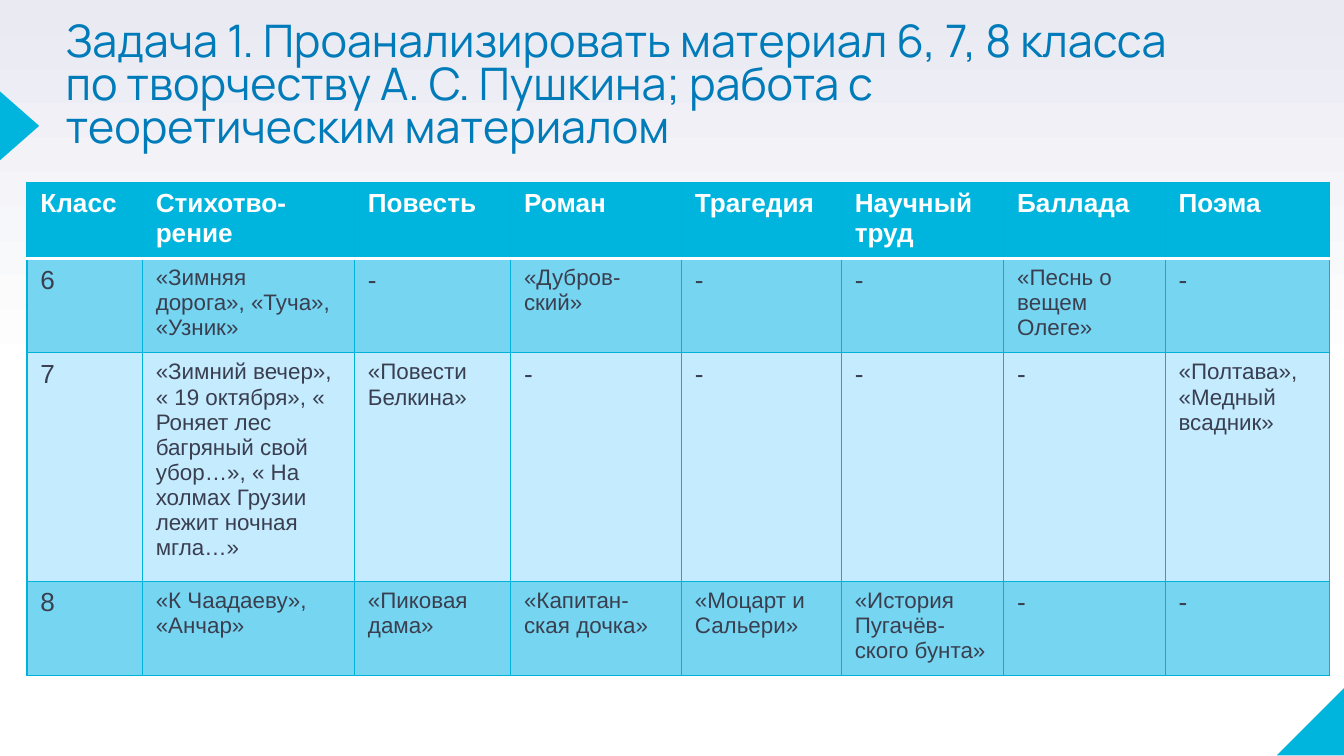
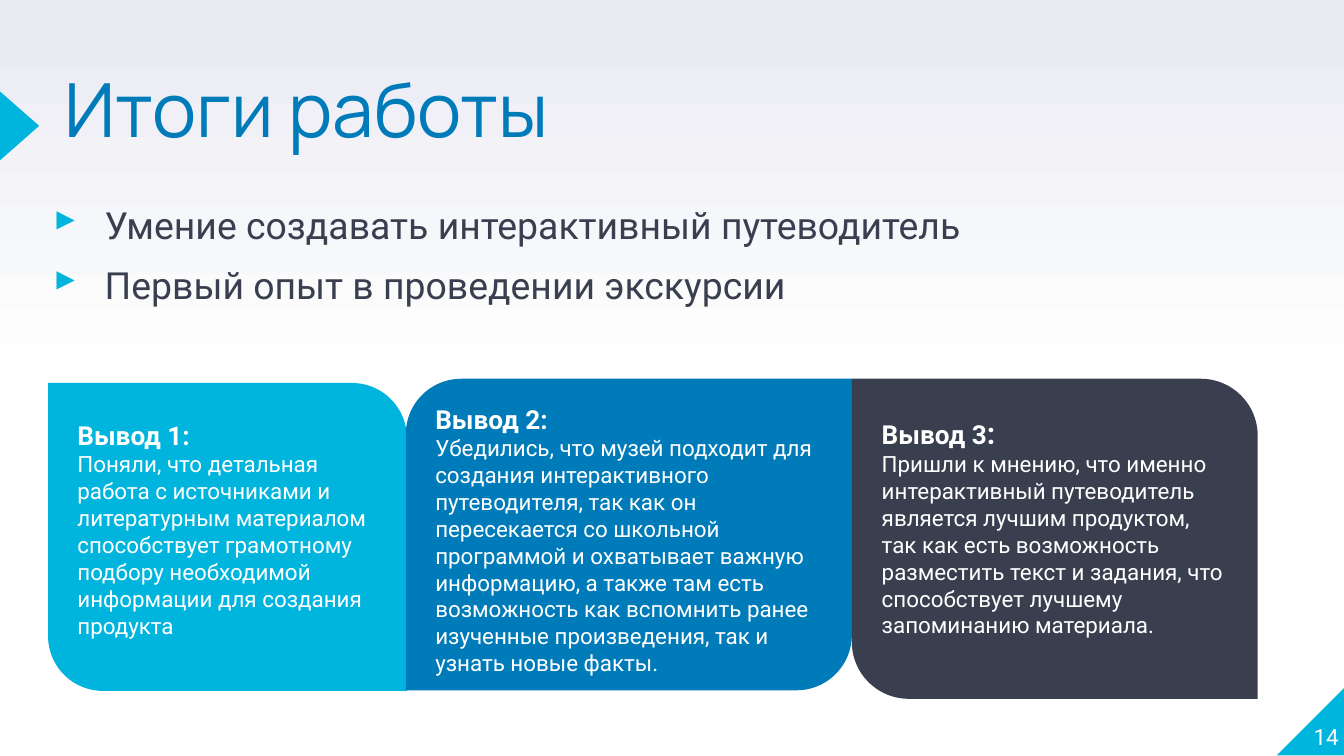
"""Build two slides: a table of works by school class and the results of the project."""
from lxml import etree
from pptx import Presentation
from pptx import util as u
from pptx.dml.color import RGBColor
from pptx.enum import shapes, text
from pptx.oxml import ns

COLORS = {
    "cyan": "00B5DD", "blue": "007BB9", "dark": "3A3F50", "white": "FFFFFF",
    "haze": "E9EAF2", "grid": "00B1D8", "band": "76D5F1", "pale": "C5EBFF",
}
STYLES = {
    "title": {"name": "Manrope", "color": "blue"},
    "header": {"name": "Arial", "size": 14, "color": "white", "bold": True},
    "mark": {"name": "Arial", "size": 14, "color": "dark", "bold": False},
    "works": {"name": "Arial", "size": 12, "color": "dark", "bold": False},
    "bullet": {"name": "Roboto", "size": 20, "color": "dark"},
    "heading": {"name": "Roboto", "size": 14, "color": "white", "bold": True},
    "detail": {"name": "Roboto", "size": 12, "color": "white", "bold": False},
}

TASK_TITLE = ("Задача 1. Проанализировать материал 6, 7, 8 класса по творчеству "
              "А. С. Пушкина; работа с теоретическим материалом")
TABLE_ROWS = [
    ["Класс", "Стихотво-рение", "Повесть", "Роман", "Трагедия", "Научный труд", "Баллада", "Поэма"],
    ["6", "«Зимняя дорога», «Туча», «Узник»", "-", "«Дубров-ский»", "-", "-",
     "«Песнь о вещем Олеге»", "-"],
    ["7", "«Зимний вечер», « 19 октября», « Роняет лес багряный свой убор…», "
          "« На холмах Грузии лежит ночная мгла…»",
     "«Повести Белкина»", "-", "-", "-", "-", "«Полтава»,\n«Медный всадник»"],
    ["8", "«К Чаадаеву», «Анчар»", "«Пиковая дама»", "«Капитан-ская дочка»",
     "«Моцарт и Сальери»", "«История Пугачёв-ского бунта»", "-", "-"],
]
COLUMN_WIDTHS = [2.18, 4.01, 2.95, 3.23, 3.02, 3.07, 3.05, 3.1]
ROW_HEIGHTS = [1.38, 1.68, 4.03, 1.68]
ROW_FILLS = ["cyan", "band", "pale", "band"]

RESULTS_TITLE = "Итоги работы"
RESULTS = ["Умение создавать интерактивный путеводитель", "Первый опыт в проведении экскурсии"]
CONCLUSIONS = [
    {"heading": [("Вывод 1:", {})],
     "detail": "Поняли, что детальная работа с источниками и литературным материалом "
               "способствует грамотному подбору необходимой информации для создания продукта",
     "place": (0.91, 7.24, 6.78, 5.82), "corners": (0, 0.178), "fill": "cyan", "top": 0.38},
    {"heading": [("Вывод 2:", {})],
     "detail": "Убедились, что музей подходит для создания интерактивного путеводителя, "
               "так как он пересекается со школьной программой и охватывает важную информацию, "
               "а также там есть возможность как вспомнить ранее изученные произведения, "
               "так и узнать новые факты.",
     "place": (7.67, 7.16, 8.43, 5.89), "corners": (0.178, 0), "fill": "blue", "top": 0.15},
    {"heading": [("Вывод 3", {}), (":", {"size": 16})],
     "detail": "Пришли к мнению, что именно интерактивный путеводитель является лучшим "
               "продуктом, так как есть возможность разместить текст и задания, что "
               "способствует лучшему запоминанию материала.",
     "place": (16.1, 7.16, 7.67, 6.05), "corners": (0, 0.178), "fill": "dark", "top": 0.36},
]


def rgb(name):
    return RGBColor.from_string(COLORS[name])


def lengths(values):
    return [u.Cm(value) for value in values]


def add_span(para, words, style, **changes):
    span = para.add_run()
    span.text = words
    for key, value in {**STYLES[style], **changes}.items():
        if key == "color":
            span.font.color.rgb = rgb(value)
        else:
            setattr(span.font, key, u.Pt(value) if key == "size" else value)


def set_paras(frame, count):
    for _ in range(count - 1):
        frame.add_paragraph()
    return frame.paragraphs


def set_frame(frame, margins=(0, 0, 0, 0), anchor=text.MSO_ANCHOR.TOP):
    frame.word_wrap = True
    frame.vertical_anchor = anchor
    for side, value in zip(("left", "top", "right", "bottom"), margins):
        setattr(frame, "margin_" + side, u.Cm(value))
    return frame


def add_box(page, place, **options):
    return set_frame(page.shapes.add_textbox(*lengths(place)).text_frame, **options)


def add_figure(page, kind, place, fill, rotation=0):
    figure = page.shapes.add_shape(kind, *lengths(place))
    figure.shadow.inherit = False
    figure.fill.solid()
    figure.fill.fore_color.rgb = rgb(fill)
    figure.line.fill.background()
    figure.rotation = rotation
    return figure


def add_page(deck, title, place, size):
    page = deck.slides.add_slide(deck.slide_layouts[6])
    fill = page.background.fill
    fill.gradient()
    fill.gradient_angle = 90
    for stop, position, name in zip(fill.gradient_stops, (0.5, 1), ("white", "haze")):
        stop.position = position
        stop.color.rgb = rgb(name)
    kinds = shapes.MSO_SHAPE
    add_figure(page, kinds.RIGHT_TRIANGLE, (24.13, 12.98, 1.3, 1.3), "cyan", 270)
    add_figure(page, kinds.ISOSCELES_TRIANGLE, (-0.28, 2.01, 1.3, 0.74), "cyan", 90)
    para = add_box(page, place).paragraphs[0]
    para.line_spacing = 0.8
    add_span(para, title, "title", size=size)
    return page


def set_borders(cell, borders):
    props = cell._tc.get_or_add_tcPr()
    for index, (side, (name, width)) in enumerate(borders.items()):
        line = etree.Element(ns.qn("a:ln" + side), w=str(u.Pt(width)))
        fill = etree.SubElement(line, ns.qn("a:solidFill"))
        etree.SubElement(fill, ns.qn("a:srgbClr"), val=COLORS[name])
        props.insert(index, line)


def add_works_table(page):
    place = (0.51, 3.45, sum(COLUMN_WIDTHS), sum(ROW_HEIGHTS))
    table = page.shapes.add_table(len(TABLE_ROWS), len(COLUMN_WIDTHS), *lengths(place)).table
    table.horz_banding = False
    for column, width in zip(table.columns, COLUMN_WIDTHS):
        column.width = u.Cm(width)
    for row, height in zip(table.rows, ROW_HEIGHTS):
        row.height = u.Cm(height)
    for r, values in enumerate(TABLE_ROWS):
        borders = dict.fromkeys("LRTB", ("grid", 0.75))
        if r < 2:
            borders["B" if r == 0 else "T"] = ("white", 2)
        for c, value in enumerate(values):
            cell = table.cell(r, c)
            cell.fill.solid()
            cell.fill.fore_color.rgb = rgb(ROW_FILLS[r])
            set_borders(cell, borders)
            style = "header" if r == 0 else "mark" if len(value) == 1 else "works"
            lines = value.split("\n")
            for para, line in zip(set_paras(cell.text_frame, len(lines)), lines):
                add_span(para, line, style)


def add_results(page):
    frame = add_box(page, (0.71, 3.73, 18.59, 2.57))
    for index, (para, result) in enumerate(zip(set_paras(frame, len(RESULTS)), RESULTS)):
        props = para._p.get_or_add_pPr()
        props.set("marL", str(u.Cm(1.27)))
        props.set("indent", str(u.Cm(-0.97)))
        color = etree.SubElement(props, ns.qn("a:buClr"))
        etree.SubElement(color, ns.qn("a:srgbClr"), val=COLORS["cyan"])
        etree.SubElement(props, ns.qn("a:buChar"), char="▸")
        para.line_spacing = 1.1
        para.space_before = u.Pt(6 if index else 0)
        add_span(para, result, "bullet")


def add_conclusion(page, card):
    figure = add_figure(page, shapes.MSO_SHAPE.ROUND_2_DIAG_RECTANGLE, card["place"], card["fill"])
    for index, value in enumerate(card["corners"]):
        figure.adjustments[index] = value
    frame = set_frame(figure.text_frame, margins=(0.25, card["top"], 0.25, 0))
    heading, detail = set_paras(frame, 2)
    for para in (heading, detail):
        para.alignment = text.PP_ALIGN.LEFT
    for words, changes in card["heading"]:
        add_span(heading, words, "heading", **changes)
    add_span(detail, card["detail"], "detail")


def add_page_number(page, number):
    frame = add_box(page, (24.03, 12.88, 1.27, 1.3), anchor=text.MSO_ANCHOR.BOTTOM)
    para = frame.paragraphs[0]
    para.alignment = text.PP_ALIGN.RIGHT
    add_span(para, number, "detail")


def main():
    deck = Presentation()
    deck.slide_width, deck.slide_height = lengths((25.4, 14.29))

    add_works_table(add_page(deck, TASK_TITLE, (1.24, 0.43, 21.41, 3.15), 24))

    page = add_page(deck, RESULTS_TITLE, (1.22, 1.52, 13.49, 1.65), 40)
    add_page_number(page, "14")
    add_results(page)
    for card in CONCLUSIONS:
        add_conclusion(page, card)

    deck.save("out.pptx")


if __name__ == "__main__":
    main()
